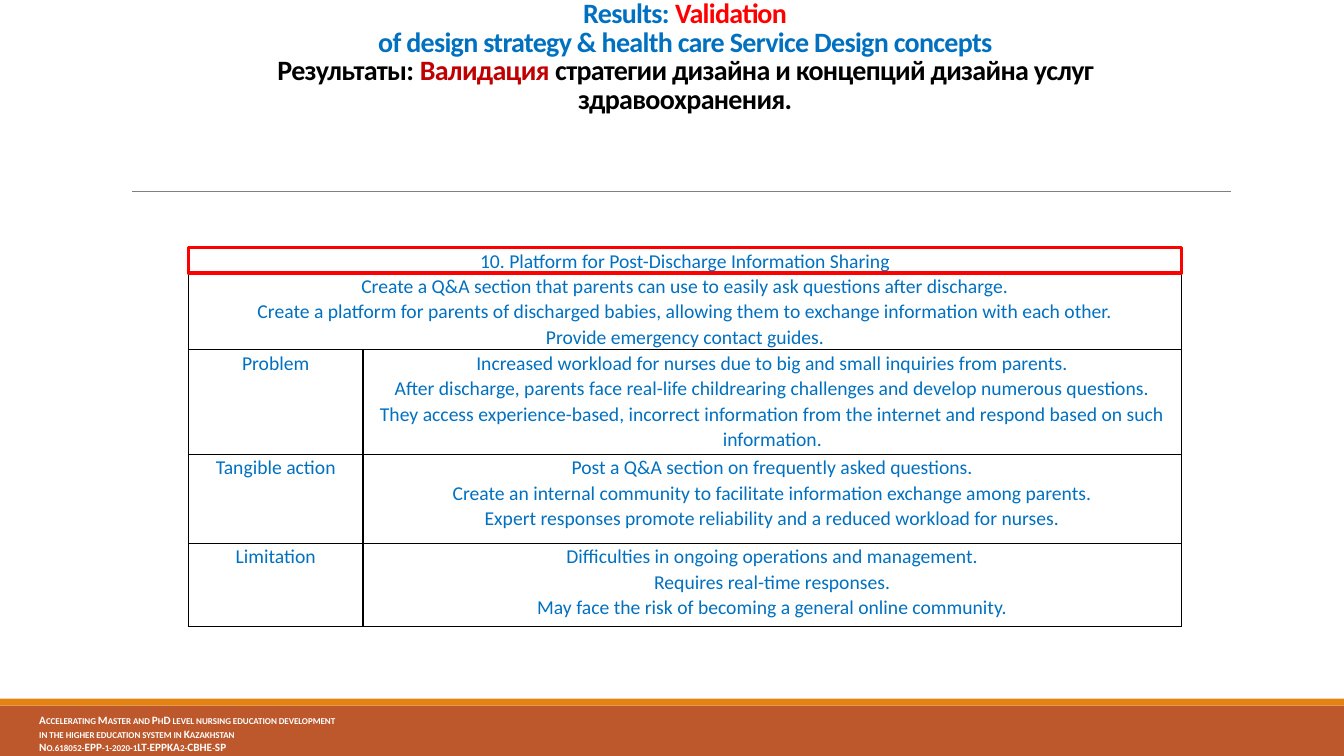
"""Build the validation results slide with the platform concept table."""
from lxml.etree import SubElement
from pptx import Presentation
from pptx.enum.shapes import MSO_CONNECTOR as Connector, MSO_SHAPE as Shape
from pptx.enum.text import MSO_ANCHOR as Anchor, PP_ALIGN as Align
from pptx.dml.color import RGBColor
from pptx.oxml.ns import qn
from pptx.util import Inches, Pt

BLUE, RED, BLACK, WHITE = "0070C0", "FF0000", "000000", "FFFFFF"

deck = Presentation()
deck.slide_width, deck.slide_height = Inches(13.33), Inches(7.5)
page = deck.slides.add_slide(deck.slide_layouts[6])


def grid(left, top, width, height):
    """Turn columns and rows of a 100 by 100 page grid into lengths."""
    column, row = deck.slide_width / 100, deck.slide_height / 100
    return [round(n) for n in (left * column, top * row, width * column, height * row)]


def paint(fill, color):
    """Give a shape, line, cell or font a solid colour."""
    fill.solid()
    fill.fore_color.rgb = RGBColor.from_string(color)


for top, height, color in [(93.33, 6.67, "BD582C"), (92.4, 0.93, "E48312")]:
    bar = page.shapes.add_shape(Shape.RECTANGLE, *grid(0, top, 100, height))
    bar.shadow.inherit = False
    paint(bar.fill, color)
    bar.line.fill.background()

left, top, width, _ = grid(9.83, 25.33, 81.77, 0)
rule = page.shapes.add_connector(Connector.STRAIGHT, left, top, left + width, top)
paint(rule.line.fill, "808080")
rule.line.width = Pt(0.5)
SubElement(rule._element.spPr, qn("a:effectLst"))

footer = page.shapes.add_textbox(*grid(2.18, 93.73, 34.43, 6.27)).text_frame
footer.word_wrap = True
footer.text = """Accelerating Master and PhD level nursing education development
in the higher education system in Kazakhstan
No.618052-EPP-1-2020-1LT-EPPKA2-CBHE-SP"""
for para in footer.paragraphs:
    for span in para.runs:
        span.font.name, span.font.size, span.font.bold = "Calibri", Pt(8), True
        paint(span.font.fill, WHITE)
        span.font._element.set("cap", "small")

table_left, table_top = 14.03, 32.8
columns = [12.98, 60.91]
rows = [3.33, 10.13, 13.87, 11.73, 11.07]
concept = [
    ["10. Platform for Post-Discharge Information Sharing"],
    ["""Create a Q&A section that parents can use to easily ask questions after discharge.
Create a platform for parents of discharged babies, allowing them to exchange information with each other.
Provide emergency contact guides."""],
    ["Problem",
     """Increased workload for nurses due to big and small inquiries from parents.
After discharge, parents face real-life childrearing challenges and develop numerous questions.
They access experience-based, incorrect information from the internet and respond based on such information."""],
    ["Tangible action",
     """Post a Q&A section on frequently asked questions.
Create an internal community to facilitate information exchange among parents.
Expert responses promote reliability and a reduced workload for nurses."""],
    ["Limitation",
     """Difficulties in ongoing operations and management.
Requires real-time responses.
May face the risk of becoming a general online community."""],
]
table = page.shapes.add_table(
    len(rows), len(columns), *grid(table_left, table_top, sum(columns), sum(rows))).table
table.first_row = table.horz_banding = False
for column, share in zip(table.columns, columns):
    column.width = grid(0, 0, share, 0)[2]
for row, share in zip(table.rows, rows):
    row.height = grid(0, 0, 0, share)[3]

for row, texts in enumerate(concept):
    if len(texts) == 1:
        table.cell(row, 0).merge(table.cell(row, 1))
    for column in range(len(columns)):
        cell = table.cell(row, column)
        cell.margin_left = cell.margin_right = Inches(0.06)
        cell.margin_top = cell.margin_bottom = 0
        properties = cell._tc.get_or_add_tcPr()
        for side in ("a:lnL", "a:lnR", "a:lnT", "a:lnB"):
            border = SubElement(properties, qn(side), w=str(Pt(1)))
            SubElement(SubElement(border, qn("a:solidFill")), qn("a:srgbClr"), val=BLACK)
        paint(cell.fill, WHITE)
        if column < len(texts):
            cell.text_frame.text = texts[column]
        for para in cell.text_frame.paragraphs:
            para.alignment, para.line_spacing = Align.CENTER, 1.07
            for span in para.runs:
                span.font.name, span.font.size = "Calibri", Pt(14)
                paint(span.font.fill, BLUE)

title = page.shapes.add_textbox(*grid(table_left, 1.07, sum(columns), 14.8)).text_frame
title.word_wrap, title.vertical_anchor = True, Anchor.BOTTOM
heading = title.paragraphs[0]
heading.alignment, heading.line_spacing = Align.CENTER, 0.85
title_lines = [
    [("Results: ", BLUE), ("Validation", RED)],
    [("of design strategy & health care Service Design concepts", BLUE)],
    [("Результаты: ", BLACK), ("Валидация", "C00000"),
     (" стратегии дизайна и концепций дизайна услуг здравоохранения.", BLACK)],
]
for number, parts in enumerate(title_lines):
    if number:
        heading.add_line_break()
    for text, color in parts:
        span = heading.add_run()
        span.text = text
        span.font.name, span.font.size, span.font.bold = "Calibri", Pt(20), True
        paint(span.font.fill, color)
        span.font._element.set("spc", "-50")

frame = page.shapes.add_shape(
    Shape.RECTANGLE, *grid(table_left, table_top, sum(columns), rows[0]))
frame.shadow.inherit = False
frame.fill.background()
paint(frame.line.fill, RED)
frame.line.width = Pt(2.25)

deck.save("out.pptx")
